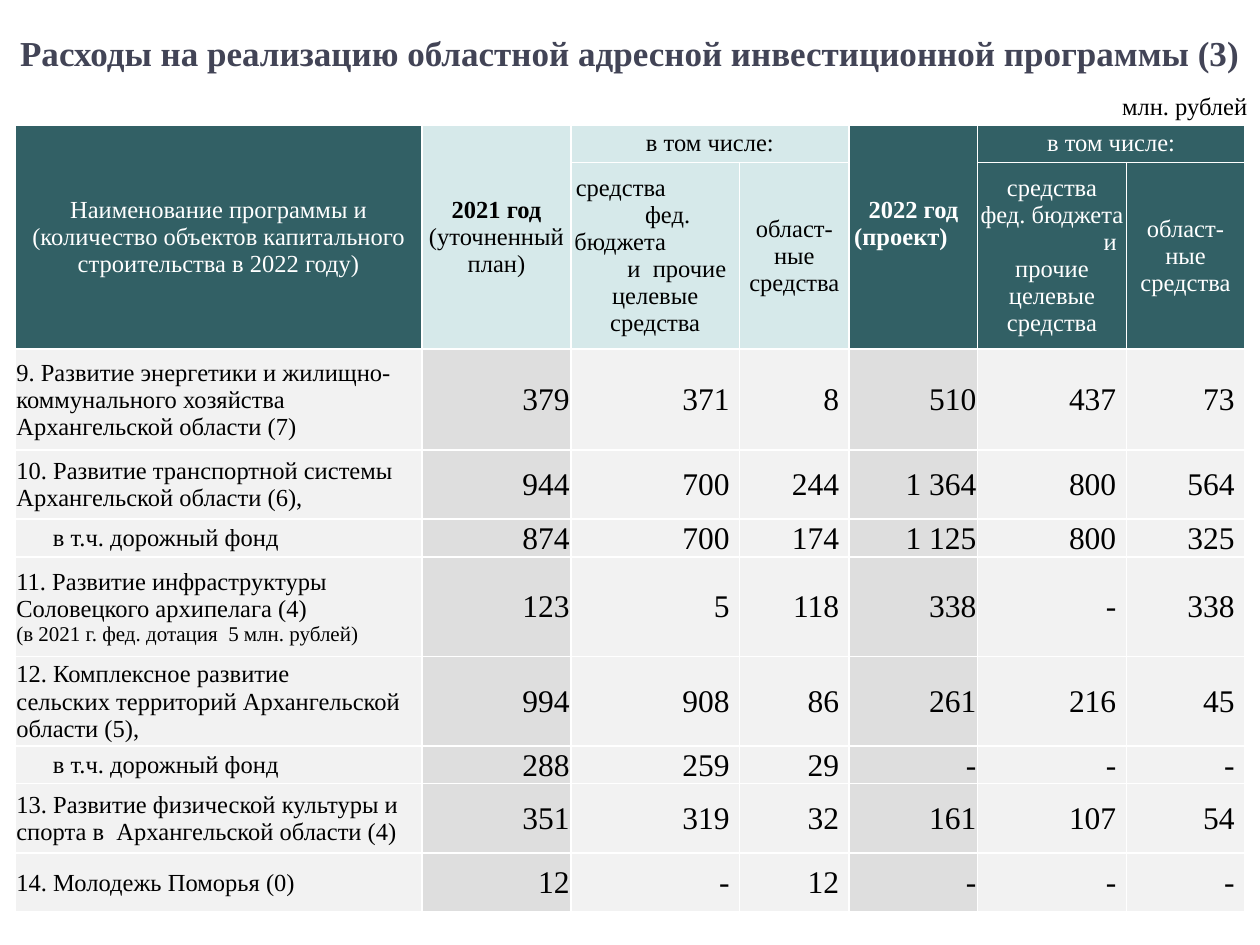
from dataclasses import dataclass

from lxml import etree
from pptx import Presentation
from pptx.dml.color import RGBColor
from pptx.enum.text import MSO_ANCHOR, MSO_AUTO_SIZE, PP_ALIGN
from pptx.oxml.ns import qn
from pptx.util import Inches, Pt

LEFT, MID, RIGHT = PP_ALIGN.LEFT, PP_ALIGN.CENTER, PP_ALIGN.RIGHT
TOP, CENTRE = MSO_ANCHOR.TOP, MSO_ANCHOR.MIDDLE
FIXED = MSO_AUTO_SIZE.NONE

FONT = "Times New Roman"
DARK, PALE, LIGHT, GREY = "326065", "D6E9EA", "F2F2F2", "DEDEDE"
WHITE, BLACK, SLATE = "FFFFFF", "000000", "424456"

# Grid of the table, in inches
WIDE, HIGH = 10, 7.5
COLS = [3.23, 1.18, 1.34, 0.87, 1.02, 1.18, 0.94]
ROWS = [0.3, 1.48, 0.8, 0.55, 0.3, 0.79, 0.71, 0.3, 0.55, 0.47]
X, Y = 0.12, 0.99
HEAD_PAD = (0.02, 0.04, 0.02, 0.04)


@dataclass
class Run:
    text: str
    size: float = 14
    bold: bool = False


@dataclass
class Para:
    runs: list[Run]
    align: PP_ALIGN = MID
    indent: float = 0


@dataclass
class Head:
    row: int
    col: int
    paras: list[Para]
    fill: str
    down: int = 1
    over: int = 1
    pad: tuple = HEAD_PAD
    anchor: MSO_ANCHOR = CENTRE


@dataclass
class Item:
    name: list[Para]
    sums: str


def line(text: str, align: PP_ALIGN = MID, indent: float = 0,
         size: float = 14, bold: bool = False) -> Para:
    return Para([Run(text, size, bold)], align, indent)


def name(text: str, indent: float = 0, size: float = 14) -> Para:
    return line(text, LEFT, indent, size)


def paint(hue: str) -> RGBColor:
    return RGBColor.from_string(hue)


def write(frame, paras: list[Para], hue: str) -> None:
    for i, para in enumerate(paras):
        p = frame.paragraphs[0] if i == 0 else frame.add_paragraph()
        p.alignment = para.align
        if para.indent:
            p._p.get_or_add_pPr().set("marL", str(Inches(para.indent)))
        for part in para.runs:
            run = p.add_run()
            run.text = part.text
            run.font.name = FONT
            run.font.size = Pt(part.size)
            run.font.bold = part.bold
            run.font.color.rgb = paint(hue)


def style(cell, fill: str) -> None:
    props = cell._tc.get_or_add_tcPr()
    for side in ("lnL", "lnR", "lnT", "lnB"):
        edge = etree.SubElement(props, qn(f"a:{side}"), w=str(Pt(1)))
        solid = etree.SubElement(edge, qn("a:solidFill"))
        etree.SubElement(solid, qn("a:srgbClr"), val=WHITE)
    cell.fill.solid()
    cell.fill.fore_color.rgb = paint(fill)


def fill_cell(cell, paras: list[Para], hue: str, pad: tuple,
              anchor: MSO_ANCHOR = CENTRE) -> None:
    (cell.margin_left, cell.margin_top,
     cell.margin_right, cell.margin_bottom) = map(Inches, pad)
    cell.vertical_anchor = anchor
    write(cell.text_frame, paras, hue)


def draw_head(table, head: Head) -> None:
    cell = table.cell(head.row, head.col)
    for r in range(head.row, head.row + head.down):
        for c in range(head.col, head.col + head.over):
            style(table.cell(r, c), head.fill)
    if head.down * head.over > 1:
        cell.merge(table.cell(head.row + head.down - 1,
                              head.col + head.over - 1))
    hue = WHITE if head.fill == DARK else BLACK
    fill_cell(cell, head.paras, hue, head.pad, head.anchor)


def draw_item(table, row: int, item: Item) -> None:
    cells = [item.name] + [[line(s, RIGHT, size=18)]
                           for s in item.sums.split("|")]
    for col, paras in enumerate(cells):
        total = col in (1, 4)
        cell = table.cell(row, col)
        style(cell, GREY if total else LIGHT)
        right = 0.01 if total or col == 0 else 0.08
        fill_cell(cell, paras, BLACK, (0.01, 0.01, right, 0))


REGION = [line("област-ные средства")]
AMONG = [line("в том числе:")]
HEADS = [
    Head(0, 0, [line("Наименование программы и (количество объектов "
                     "капитального строительства в 2022 году)")],
         DARK, down=2, pad=(0.1, 0.05, 0.1, 0.05)),
    Head(0, 1, [Para([Run("2021 год ", bold=True), Run("(уточненный план)")])],
         PALE, down=2),
    Head(0, 2, AMONG, PALE, over=2, anchor=TOP),
    Head(0, 4, [line("2022 год", bold=True),
                line("(проект)", LEFT, 0.02, bold=True)],
         DARK, down=2, pad=(0.02, 0.04, 0.02, 0.25)),
    Head(0, 5, AMONG, DARK, over=2, anchor=TOP),
    Head(1, 2, [name("средства", 0.02), name("фед.", 0.57),
                name("бюджета", 0.01), name("и  прочие", 0.43),
                line("целевые средства")], PALE),
    Head(1, 3, REGION, PALE),
    Head(1, 5, [line("средства"), line("фед. бюджета"), name("и", 0.98),
                line("прочие целевые средства")], DARK),
    Head(1, 6, REGION, DARK),
]

ROAD = [name("в т.ч. дорожный фонд", 0.29)]
ITEMS = [
    Item([name("9. Развитие энергетики и жилищно-коммунального хозяйства "
               "Архангельской области (7)")], "379|371|8|510|437|73"),
    Item([name("10. Развитие транспортной системы Архангельской области (6),")],
         "944|700|244|1 364|800|564"),
    Item(ROAD, "874|700|174|1 125|800|325"),
    Item([name("11. Развитие инфраструктуры Соловецкого архипелага (4)"),
          name("(в 2021 г. фед. дотация  5 млн. рублей)", size=12)],
         "123|5|118|338|-|338"),
    Item([name("12. Комплексное развитие"),
          name("сельских территорий Архангельской области (5),")],
         "994|908|86|261|216|45"),
    Item(ROAD, "288|259|29|-|-|-"),
    Item([name("13. Развитие физической культуры и спорта в  "
               "Архангельской области (4)")], "351|319|32|161|107|54"),
    Item([name("14. Молодежь Поморья (0)")], "12|-|12|-|-|-"),
]


def draw_title(slide) -> None:
    title = slide.shapes.title
    title.left, title.top = 0, 0
    title.width, title.height = Inches(WIDE), Inches(Y)
    frame = title.text_frame
    frame.word_wrap = True
    frame.auto_size = FIXED
    frame.vertical_anchor = TOP
    frame.margin_top = Inches(0.25)
    write(frame, [line("Расходы на реализацию областной адресной "
                       "инвестиционной программы (3)", size=20, bold=True)],
          SLATE)
    # Unit of measure under the heading
    unit = frame.add_paragraph()
    unit.alignment = RIGHT
    unit.space_before = Pt(10)
    run = unit.add_run()
    run.text = "млн. рублей"
    run.font.name = FONT
    run.font.size = Pt(14)
    run.font.color.rgb = paint(BLACK)


def draw_table(slide) -> None:
    table = slide.shapes.add_table(
        len(ROWS), len(COLS), Inches(X), Inches(Y),
        Inches(sum(COLS)), Inches(sum(ROWS))).table
    table.first_row = table.horz_banding = False
    for col, width in zip(table.columns, COLS):
        col.width = Inches(width)
    for row, height in zip(table.rows, ROWS):
        row.height = Inches(height)
    for head in HEADS:
        draw_head(table, head)
    for row, item in enumerate(ITEMS, 2):
        draw_item(table, row, item)


def main() -> None:
    deck = Presentation()
    deck.slide_width, deck.slide_height = Inches(WIDE), Inches(HIGH)
    slide = deck.slides.add_slide(deck.slide_layouts[5])
    draw_title(slide)
    draw_table(slide)
    deck.save("out.pptx")


if __name__ == "__main__":
    main()
